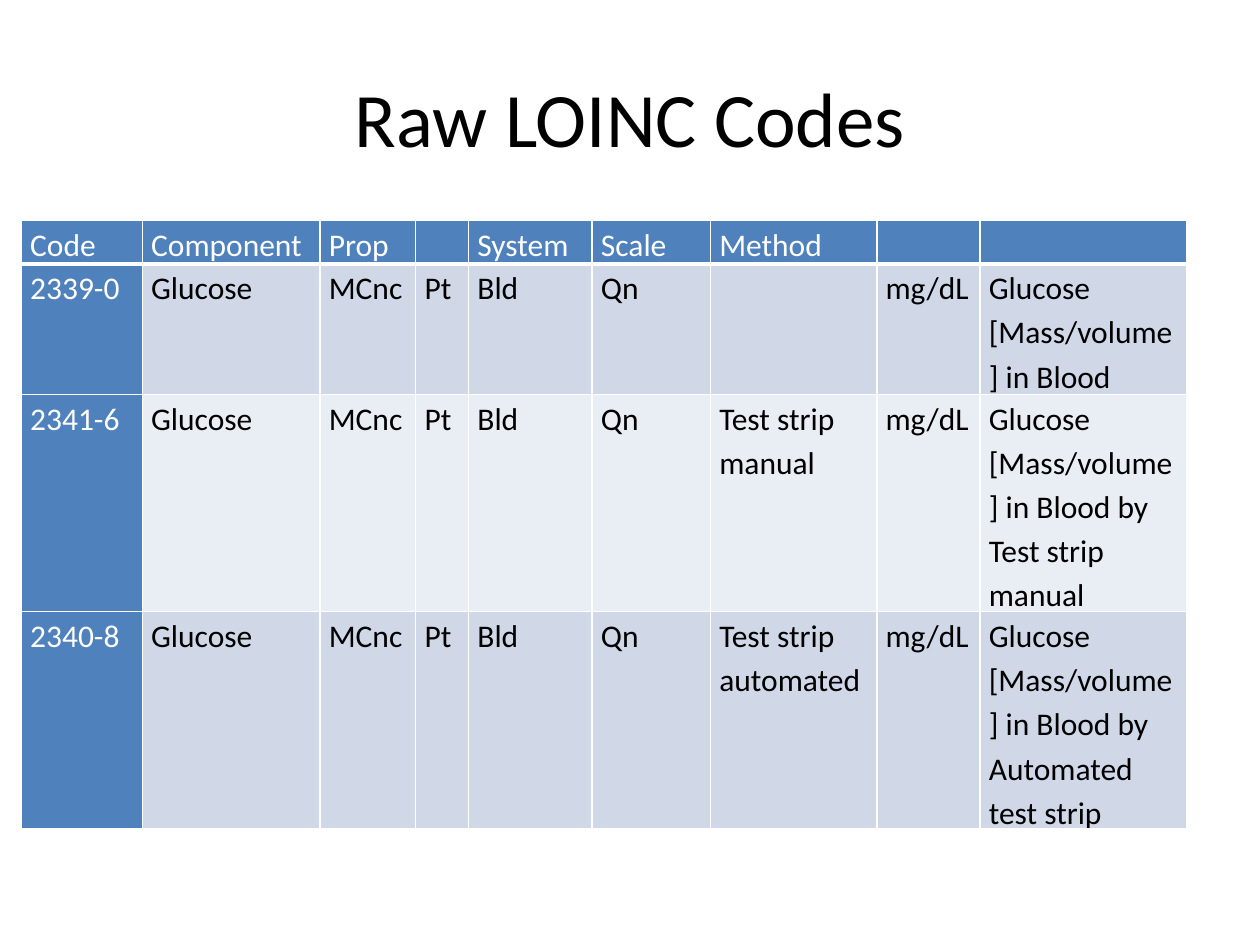
from dataclasses import dataclass

from lxml import etree
from pptx import Presentation
from pptx.dml.color import RGBColor
from pptx.enum.text import MSO_ANCHOR, PP_ALIGN
from pptx.oxml.ns import qn
from pptx.util import Inches, Pt

CENTER = PP_ALIGN.CENTER
MIDDLE = MSO_ANCHOR.MIDDLE

BLACK = RGBColor(0x00, 0x00, 0x00)
WHITE = RGBColor(0xFF, 0xFF, 0xFF)
HEADER_BLUE = RGBColor(0x4F, 0x81, 0xBD)
BAND_DARK = RGBColor(0xD0, 0xD8, 0xE8)
BAND_LIGHT = RGBColor(0xE9, 0xED, 0xF4)

FONT = "Calibri"
SLIDE_WIDTH, SLIDE_HEIGHT = Inches(10), Inches(7.5)
GRID = SLIDE_WIDTH / 100  # the slide is 100 columns by 75 rows

CODE_COLUMNS = (9.6, 14.1, 7.6, 4.2, 9.8, 9.4, 13.2, 8.2, 16.4)
CODE_ROWS = (3.2, 10, 16.8, 16.8)
HEADINGS = ("Code", "Component", "Prop", "", "System", "Scale", "Method", "", "")


@dataclass(frozen=True)
class LoincCode:
    code: str
    method: str
    long_name: str

    def values(self) -> tuple[str, ...]:
        return (self.code, "Glucose", "MCnc", "Pt", "Bld", "Qn",
                self.method, "mg/dL", self.long_name)


LOINC_CODES = (
    LoincCode("2339-0", "", "Glucose [Mass/volume] in Blood"),
    LoincCode("2341-6", "Test strip manual",
              "Glucose [Mass/volume] in Blood by Test strip manual"),
    LoincCode("2340-8", "Test strip automated",
              "Glucose [Mass/volume] in Blood by Automated test strip"),
)


def grid(units: float) -> int:
    return round(units * GRID)


def add_run(paragraph, text: str, size: float, color: RGBColor) -> None:
    run = paragraph.add_run()
    run.text = text
    run.font.name = FONT
    run.font.size = Pt(size)
    run.font.bold = False
    run.font.color.rgb = color


def set_borders(cell, bottom_width: float) -> None:
    properties = cell._tc.get_or_add_tcPr()
    widths = {"a:lnL": 1, "a:lnR": 1, "a:lnT": 1, "a:lnB": bottom_width}
    for side, width in widths.items():
        line = etree.SubElement(properties, qn(side), w=str(Pt(width)))
        fill = etree.SubElement(line, qn("a:solidFill"))
        etree.SubElement(fill, qn("a:srgbClr"), val=str(WHITE))


def fill_cell(cell, text: str, fill: RGBColor, color: RGBColor,
              bottom_width: float) -> None:
    set_borders(cell, bottom_width)
    cell.fill.solid()
    cell.fill.fore_color.rgb = fill
    cell.margin_left = cell.margin_right = Inches(0.07)
    cell.margin_top = cell.margin_bottom = 0
    paragraph = cell.text_frame.paragraphs[0]
    paragraph.line_spacing = 1.15
    if text:
        add_run(paragraph, text, 18, color)


def add_title(slide, text: str) -> None:
    title = slide.shapes.add_textbox(grid(5), grid(3), grid(90), grid(12.5))
    frame = title.text_frame
    frame.word_wrap = True
    frame.vertical_anchor = MIDDLE
    frame.paragraphs[0].alignment = CENTER
    add_run(frame.paragraphs[0], text, 44, BLACK)


def add_code_table(slide) -> None:
    records = [HEADINGS] + [code.values() for code in LOINC_CODES]
    table = slide.shapes.add_table(
        len(records), len(HEADINGS), grid(1.7), grid(17.5),
        grid(sum(CODE_COLUMNS)), grid(sum(CODE_ROWS))).table
    table.first_row = table.horz_banding = False
    for column, width in zip(table.columns, CODE_COLUMNS):
        column.width = grid(width)
    for row, height in zip(table.rows, CODE_ROWS):
        row.height = grid(height)

    # Header row and code column are blue, the rest is banded
    for row_index, record in enumerate(records):
        band = BAND_DARK if row_index % 2 else BAND_LIGHT
        for column_index, text in enumerate(record):
            is_heading = row_index == 0 or column_index == 0
            fill_cell(table.cell(row_index, column_index), text,
                      fill=HEADER_BLUE if is_heading else band,
                      color=WHITE if is_heading else BLACK,
                      bottom_width=3 if row_index == 0 else 1)


def main() -> None:
    presentation = Presentation()
    presentation.slide_width = SLIDE_WIDTH
    presentation.slide_height = SLIDE_HEIGHT
    slide = presentation.slides.add_slide(presentation.slide_layouts[6])
    add_title(slide, "Raw LOINC Codes")
    add_code_table(slide)
    presentation.save("out.pptx")


if __name__ == "__main__":
    main()
